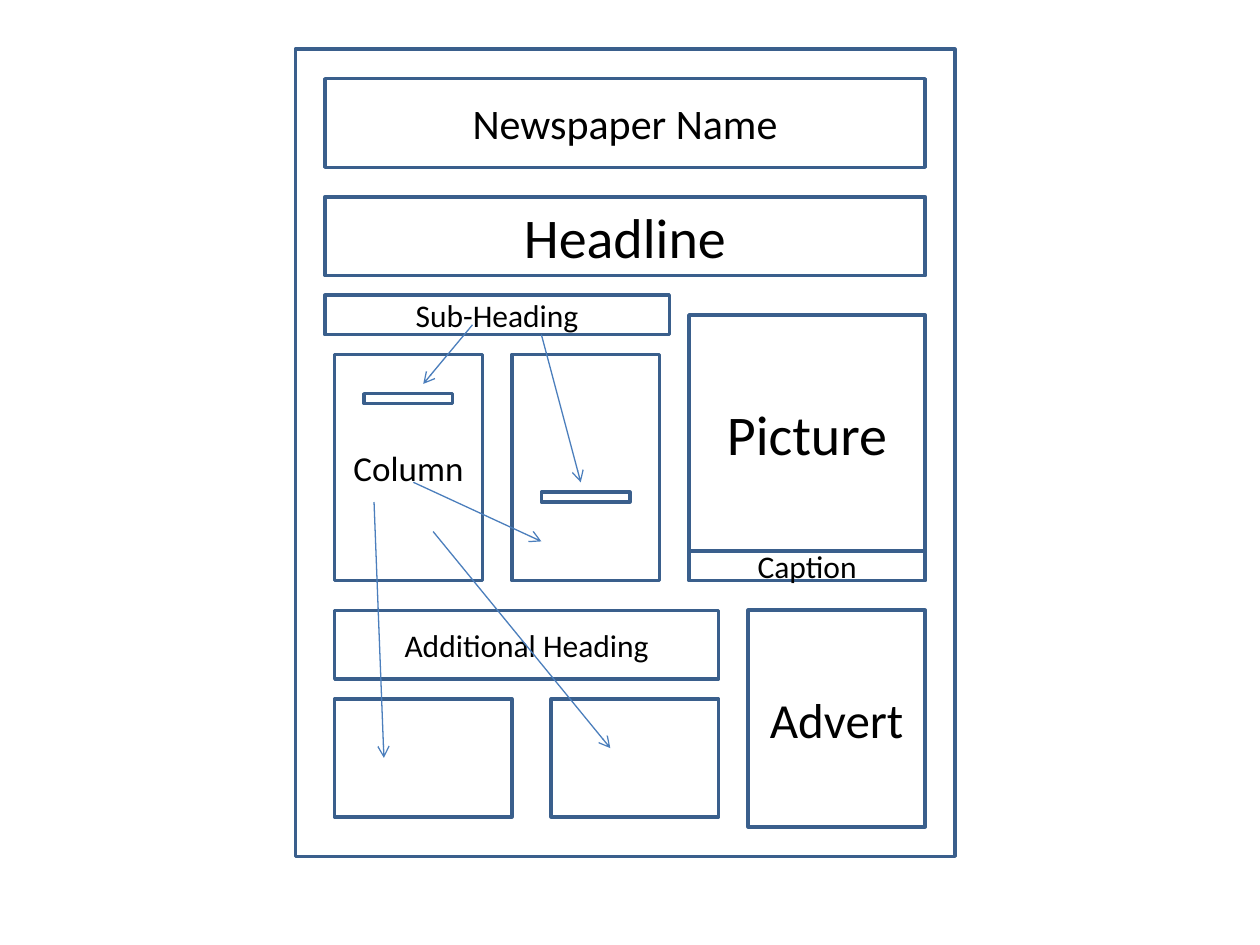
import pptx
import pptx.dml.color
import pptx.enum.shapes
import pptx.enum.text
import pptx.util
from dataclasses import dataclass
from lxml import etree
from pptx.oxml.ns import qn

COLORS = {"paper": "FFFFFF", "edge": "3A5F8C", "arrow": "4B7EBC", "text": "000000"}
FONT = "Calibri"
WIDE, HIGH = 25.4, 19.05
COLS = 128  # the page is planned on square units, 128 across and 96 down


@dataclass
class Box:
    left: int
    top: int
    width: int
    height: int
    text: str = ""
    size: int = 18


@dataclass
class Arrow:
    x1: int
    y1: int
    x2: int
    y2: int


# Parts of the front page, back to front, in grid units
BOXES = [
    Box(30, 5, 67, 82),
    Box(33, 8, 61, 9, "Newspaper Name", 24),
    Box(33, 20, 61, 8, "Headline", 32),
    Box(70, 32, 24, 24, "Picture", 32),
    Box(34, 36, 15, 23, "Column", 20),
    Box(52, 36, 15, 23),
    Box(37, 40, 9, 1),
    Box(70, 56, 24, 3, "Caption"),
    Box(55, 50, 9, 1),
    Box(34, 62, 39, 7, "Additional Heading"),
    Box(76, 62, 18, 22, "Advert", 28),
    Box(34, 71, 18, 12),
    Box(56, 71, 17, 12),
    Box(33, 30, 35, 4, "Sub-Heading"),
]

# From each label to the parts it names
ARROWS = [
    Arrow(48, 33, 43, 39),
    Arrow(55, 34, 59, 49),
    Arrow(42, 49, 55, 55),
    Arrow(38, 51, 39, 77),
    Arrow(44, 54, 62, 76),
]


def grid(units: int) -> pptx.util.Length:
    return pptx.util.Cm(units * WIDE / COLS)


def color(name: str) -> pptx.dml.color.RGBColor:
    return pptx.dml.color.RGBColor.from_string(COLORS[name])


def write(shape, text: str, *, size: int, hue: str = "text") -> None:
    frame = shape.text_frame
    frame.word_wrap = True
    frame.vertical_anchor = pptx.enum.text.MSO_ANCHOR.MIDDLE
    para = frame.paragraphs[0]
    para.alignment = pptx.enum.text.PP_ALIGN.CENTER
    run = para.add_run()
    run.text = text
    run.font.name = FONT
    run.font.size = pptx.util.Pt(size)
    run.font.color.rgb = color(hue)


def draw_box(slide, box: Box) -> None:
    shape = slide.shapes.add_shape(
        pptx.enum.shapes.MSO_SHAPE.RECTANGLE,
        grid(box.left), grid(box.top), grid(box.width), grid(box.height))
    shape.shadow.inherit = False
    shape.fill.solid()
    shape.fill.fore_color.rgb = color("paper")
    shape.line.color.rgb = color("edge")
    shape.line.width = pptx.util.Pt(2)
    if box.text:
        write(shape, box.text, size=box.size)


def draw_arrow(slide, arrow: Arrow) -> None:
    link = slide.shapes.add_connector(
        pptx.enum.shapes.MSO_CONNECTOR.STRAIGHT,
        grid(arrow.x1), grid(arrow.y1), grid(arrow.x2), grid(arrow.y2))
    link.line.color.rgb = color("arrow")
    link.line.width = pptx.util.Pt(0.75)
    # Open arrowhead, no shadow
    props = link._element.spPr
    etree.SubElement(props.find(qn("a:ln")), qn("a:tailEnd"), type="arrow")
    etree.SubElement(props, qn("a:effectLst"))


def main() -> None:
    deck = pptx.Presentation()
    deck.slide_width = pptx.util.Cm(WIDE)
    deck.slide_height = pptx.util.Cm(HIGH)
    slide = deck.slides.add_slide(deck.slide_layouts[6])
    for box in BOXES:
        draw_box(slide, box)
    for arrow in ARROWS:
        draw_arrow(slide, arrow)
    deck.save("out.pptx")


if __name__ == "__main__":
    main()
